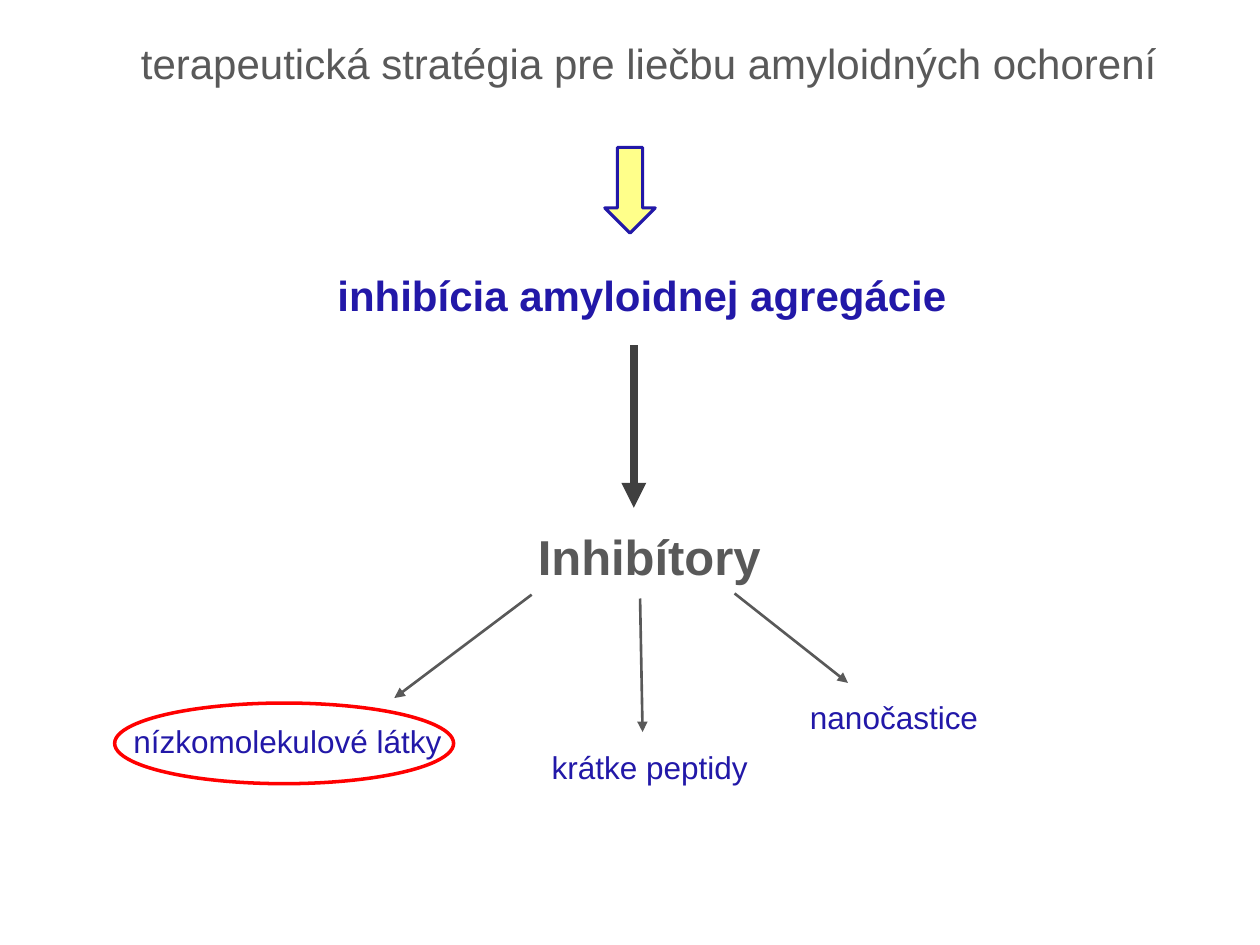
from dataclasses import dataclass

from lxml.etree import SubElement
from pptx import Presentation
from pptx.dml.color import RGBColor
from pptx.enum.shapes import MSO_CONNECTOR, MSO_SHAPE
from pptx.enum.text import MSO_AUTO_SIZE
from pptx.oxml.ns import qn
from pptx.util import Inches, Pt


@dataclass(frozen=True)
class Theme:
    """Colours, font and type sizes of the slide."""
    font: str = "Arial"
    blue: str = "2218A8"
    grey: str = "595959"
    dark: str = "404040"
    red: str = "FF0000"
    yellow: str = "FFFF00"
    label: int = 18
    statement: int = 24
    heading: int = 28


def write_text(paragraph, text, *, font, size, color, bold=False):
    """Add one formatted run to a paragraph."""
    run = paragraph.add_run()
    run.text = text
    run.font.name = font
    run.font.size = Pt(size)
    run.font.bold = bold
    run.font.color.rgb = RGBColor.from_string(color)


class Diagram:
    """Draws elements on a grid of 100 columns by 75 rows."""

    columns, rows = 100, 75

    def __init__(self, presentation, theme):
        """Add a blank slide and keep its style."""
        self.theme = theme
        self.column = presentation.slide_width / self.columns
        self.row = presentation.slide_height / self.rows
        self.slide = presentation.slides.add_slide(presentation.slide_layouts[6])

    def grid(self, *values):
        """Turn alternating columns and rows into lengths."""
        return [round(value * (self.row if index % 2 else self.column))
                for index, value in enumerate(values)]

    def text(self, text, box, size, color, bold=False):
        """Add a single unwrapped line of text."""
        frame = self.slide.shapes.add_textbox(*self.grid(*box)).text_frame
        frame.word_wrap = False
        frame.auto_size = MSO_AUTO_SIZE.SHAPE_TO_FIT_TEXT
        write_text(frame.paragraphs[0], text, font=self.theme.font,
                   size=size, color=color, bold=bold)

    def arrow(self, start, end, color, width=1.5):
        """Add a straight line with a triangular head at its end."""
        connector = self.slide.shapes.add_connector(
            MSO_CONNECTOR.STRAIGHT, *self.grid(*start, *end))
        connector.line.color.rgb = RGBColor.from_string(color)
        connector.line.width = Pt(width)
        SubElement(connector.line._get_or_add_ln(), qn("a:tailEnd"), type="triangle")
        SubElement(connector._element.spPr, qn("a:effectLst"))

    def shape(self, kind, box, line, width, fill=None, opacity=100, rotation=0):
        """Add an outlined preset shape with an optional translucent fill."""
        shape = self.slide.shapes.add_shape(kind, *self.grid(*box))
        shape.shadow.inherit = False
        shape.rotation = rotation
        shape.line.color.rgb = RGBColor.from_string(line)
        shape.line.width = Pt(width)
        if fill is None:
            shape.fill.background()
            return
        shape.fill.solid()
        shape.fill.fore_color.rgb = RGBColor.from_string(fill)
        color = shape._element.spPr.find(qn("a:solidFill")).find(qn("a:srgbClr"))
        SubElement(color, qn("a:alpha"), val=str(opacity * 1000))


def main():
    """Build the slide on amyloid aggregation inhibitors."""
    presentation = Presentation()
    presentation.slide_width, presentation.slide_height = Inches(10), Inches(7.5)
    theme = Theme()
    diagram = Diagram(presentation, theme)

    diagram.text("inhibícia amyloidnej agregácie", (25.8, 20.9, 51.7, 5),
                 theme.statement, theme.blue, bold=True)
    diagram.text("terapeutická stratégia pre liečbu amyloidných ochorení",
                 (10.2, 2.5, 83.5, 5), theme.statement, theme.grey)
    diagram.text("Inhibítory", (41.7, 41.3, 19.9, 5.7),
                 theme.heading, theme.grey, bold=True)

    diagram.arrow((50.3, 27.4), (50.3, 40.3), theme.dark, width=4.75)
    inhibitors = [
        ("nízkomolekulové látky", (9.6, 56.8, 26.7, 4), (42.2, 47.2), (31.3, 55.4)),
        ("krátke peptidy", (42.8, 58.9, 17.7, 4), (50.8, 47.5), (51, 58.1)),
        ("nanočastice", (63.3, 54.9, 15.5, 4), (58.3, 47.1), (67.3, 54.2)),
    ]
    for name, box, start, end in inhibitors:
        diagram.arrow(start, end, theme.grey)
        diagram.text(name, box, theme.label, theme.blue)

    diagram.shape(MSO_SHAPE.OVAL, (9.1, 55.8, 26.9, 6.4), theme.red, 2)
    diagram.shape(MSO_SHAPE.RIGHT_ARROW, (46.6, 13.1, 6.8, 4), theme.blue, 1.75,
                  fill=theme.yellow, opacity=46, rotation=90)
    presentation.save("out.pptx")


if __name__ == "__main__":
    main()
